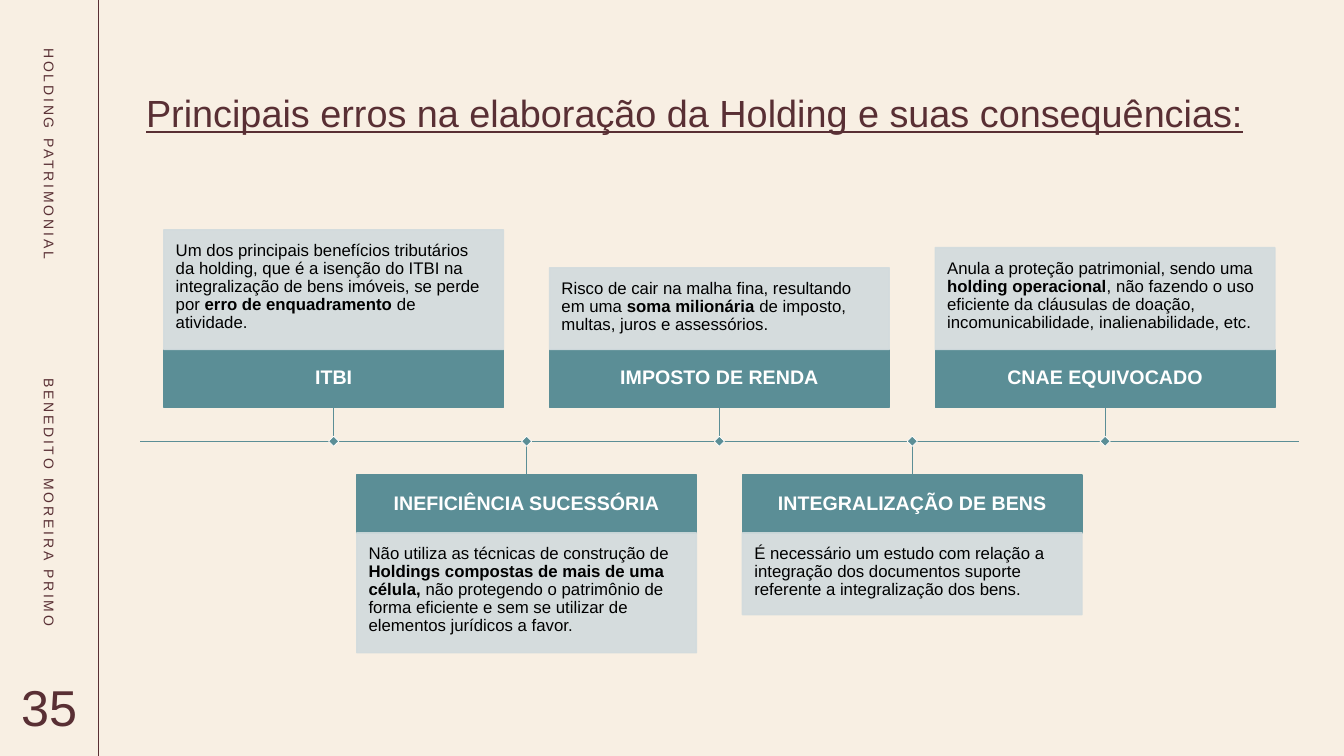
"""Build a slide with a timeline of common mistakes when setting up a holding."""
from dataclasses import dataclass

import lxml.etree
import pptx
import pptx.dml.color
import pptx.enum.shapes
import pptx.enum.text
import pptx.oxml.ns
import pptx.util
from pptx.util import Cm

ALIGN = pptx.enum.text.PP_ALIGN
ANCHOR = pptx.enum.text.MSO_ANCHOR
SHAPE = pptx.enum.shapes.MSO_SHAPE


@dataclass(frozen=True)
class Theme:
    font: str = "Arial"
    background: str = "F8EFE3"
    wine: str = "592F34"
    teal: str = "5B8E96"
    pale: str = "D2DBDD"
    black: str = "000000"
    white: str = "FFFFFF"
    title: float = 27
    number: float = 36
    heading: float = 14
    body: float = 12
    side: float = 10


@dataclass(frozen=True)
class Card:
    heading: str
    before: str
    bold: str
    after: str
    height: float
    above: bool


@dataclass(frozen=True)
class SideLabel:
    text: str
    top: float


THEME = Theme()

CARDS = (
    Card("ITBI",
         "Um dos principais benefícios tributários da holding, que é a isenção do ITBI "
         "na integralização de bens imóveis, se perde por ",
         "erro de enquadramento ", "de atividade.", 3.02, True),
    Card("INEFICIÊNCIA SUCESSÓRIA",
         "Não utiliza as técnicas de construção de ",
         "Holdings compostas de mais de uma célula,",
         " não protegendo o patrimônio de forma eficiente e sem se utilizar de "
         "elementos jurídicos a favor.", 3.02, False),
    Card("IMPOSTO DE RENDA",
         "Risco de cair na malha fina, resultando em uma ",
         "soma milionária ", "de imposto, multas, juros e assessórios.", 2.06, True),
    Card("INTEGRALIZAÇÃO DE BENS",
         "É necessário um estudo com relação a integração dos documentos suporte "
         "referente a integralização dos bens.", "", "", 2.06, False),
    Card("CNAE EQUIVOCADO",
         "Anula a proteção patrimonial, sendo uma ", "holding operacional",
         ", não fazendo o uso eficiente da cláusulas de doação, incomunicabilidade, "
         "inalienabilidade, etc.", 2.57, True),
)

SIDE_LABELS = (SideLabel("HOLDING PATRIMONIAL", 3.48),
               SideLabel("BENEDITO MOREIRA PRIMO", 11.79))

SIDEBAR_WIDTH = 2.49
AXIS_Y = 11.12
FIRST_X = 8.41
STEP_X = 4.86
CARD_WIDTH = 8.56
HEADING_HEIGHT = 1.46
STEM = 0.85
MARKER = 0.18


def rgb(value: str) -> pptx.dml.color.RGBColor:
    """Turn a hex string into a colour."""
    return pptx.dml.color.RGBColor.from_string(value)


def write(sp, *texts: str, size: float, color: str, bold: bool = False,
          underline: bool = False, align=ALIGN.LEFT, anchor=ANCHOR.TOP,
          inset_x: float = 0, inset_y: float = 0, line_spacing: float = 1.0,
          tracking: float = 0) -> None:
    """Write runs into a shape, with every second run in the opposite weight."""
    tf = sp.text_frame
    tf.word_wrap = True
    tf.auto_size = pptx.enum.text.MSO_AUTO_SIZE.NONE
    tf.vertical_anchor = anchor
    tf.margin_left = tf.margin_right = Cm(inset_x)
    tf.margin_top = tf.margin_bottom = Cm(inset_y)
    p = tf.paragraphs[0]
    p.alignment = align
    p.line_spacing = line_spacing
    for i, text in enumerate(texts):
        if not text:
            continue
        r = p.add_run()
        r.text = text
        r.font.name = THEME.font
        r.font.size = pptx.util.Pt(size)
        r.font.color.rgb = rgb(color)
        r.font.bold = bold != (i % 2 == 1)
        r.font.underline = underline
        if tracking:
            r._r.get_or_add_rPr().set("spc", str(int(tracking * 100)))


def add_box(slide, x: float, y: float, w: float, h: float, fill: str, line: str,
            width: float = 1, opacity: int = 100):
    """Add a filled rectangle measured in centimetres."""
    sp = slide.shapes.add_shape(SHAPE.RECTANGLE, Cm(x), Cm(y), Cm(w), Cm(h))
    sp.shadow.inherit = False
    sp.fill.solid()
    sp.fill.fore_color.rgb = rgb(fill)
    sp.line.color.rgb = rgb(line)
    sp.line.width = pptx.util.Pt(width)
    if opacity < 100:
        for clr in list(sp._element.spPr.iter(pptx.oxml.ns.qn("a:srgbClr"))):
            alpha = lxml.etree.SubElement(clr, pptx.oxml.ns.qn("a:alpha"))
            alpha.set("val", str(opacity * 1000))
    return sp


def add_line(slide, x1: float, y1: float, x2: float, y2: float, color: str,
             width: float) -> None:
    """Add a straight line without a shadow."""
    line = slide.shapes.add_connector(pptx.enum.shapes.MSO_CONNECTOR.STRAIGHT,
                                      Cm(x1), Cm(y1), Cm(x2), Cm(y2))
    line.line.color.rgb = rgb(color)
    line.line.width = pptx.util.Pt(width)
    lxml.etree.SubElement(line._element.spPr, pptx.oxml.ns.qn("a:effectLst"))


def add_sidebar(slide) -> None:
    """Add the rule, the vertical labels and the page number."""
    add_line(slide, SIDEBAR_WIDTH, 0, SIDEBAR_WIDTH, 19.05, THEME.wine, 0.75)
    for label in SIDE_LABELS:
        sp = slide.shapes.add_textbox(Cm(-2.26), Cm(label.top), Cm(7.01), Cm(SIDEBAR_WIDTH))
        sp.rotation = 90
        write(sp, label.text, size=THEME.side, color=THEME.wine, anchor=ANCHOR.MIDDLE,
              inset_y=0.2, tracking=2)
    sp = slide.shapes.add_textbox(Cm(0), Cm(16.56), Cm(SIDEBAR_WIDTH), Cm(SIDEBAR_WIDTH))
    write(sp, "35", size=THEME.number, color=THEME.wine, align=ALIGN.CENTER,
          anchor=ANCHOR.MIDDLE)


def add_card(slide, card: Card, x: float) -> None:
    """Add a card with its stem and marker, centred on x."""
    left = x - CARD_WIDTH / 2
    if card.above:
        stem_end = AXIS_Y - STEM
        heading_y = stem_end - HEADING_HEIGHT
        body_y = heading_y - card.height
    else:
        stem_end = heading_y = AXIS_Y + STEM
        body_y = heading_y + HEADING_HEIGHT
    heading = add_box(slide, left, heading_y, CARD_WIDTH, HEADING_HEIGHT,
                      THEME.teal, THEME.teal)
    write(heading, card.heading, size=THEME.heading, color=THEME.white, bold=True,
          align=ALIGN.CENTER, anchor=ANCHOR.MIDDLE, inset_x=0.2, inset_y=0.2,
          line_spacing=0.9)
    body = add_box(slide, left, body_y, CARD_WIDTH, card.height, THEME.pale, THEME.pale,
                   opacity=90)
    write(body, card.before, card.bold, card.after, size=THEME.body, color=THEME.black,
          inset_x=0.3, inset_y=0.3, line_spacing=0.9)
    add_line(slide, x, stem_end, x, AXIS_Y, THEME.teal, 0.5)
    marker = add_box(slide, x - MARKER / 2, AXIS_Y - MARKER / 2, MARKER, MARKER,
                     THEME.teal, THEME.white, width=0.5)
    marker.rotation = 45


def main() -> None:
    """Build and save the slide."""
    prs = pptx.Presentation()
    prs.slide_width, prs.slide_height = Cm(33.87), Cm(19.05)
    slide = prs.slides.add_slide(prs.slide_layouts.get_by_name("Title Only"))
    slide.background.fill.solid()
    slide.background.fill.fore_color.rgb = rgb(THEME.background)

    title = slide.shapes.title
    title.left, title.top, title.width, title.height = Cm(3.68), Cm(2.26), Cm(28.91), Cm(2.03)
    write(title, "Principais erros na elaboração da Holding e suas consequências:",
          size=THEME.title, color=THEME.wine, underline=True)

    add_sidebar(slide)
    add_line(slide, 3.53, AXIS_Y, 32.74, AXIS_Y, THEME.teal, 1)
    for i, card in enumerate(CARDS):
        add_card(slide, card, FIRST_X + i * STEP_X)
    prs.save("out.pptx")


if __name__ == "__main__":
    main()
